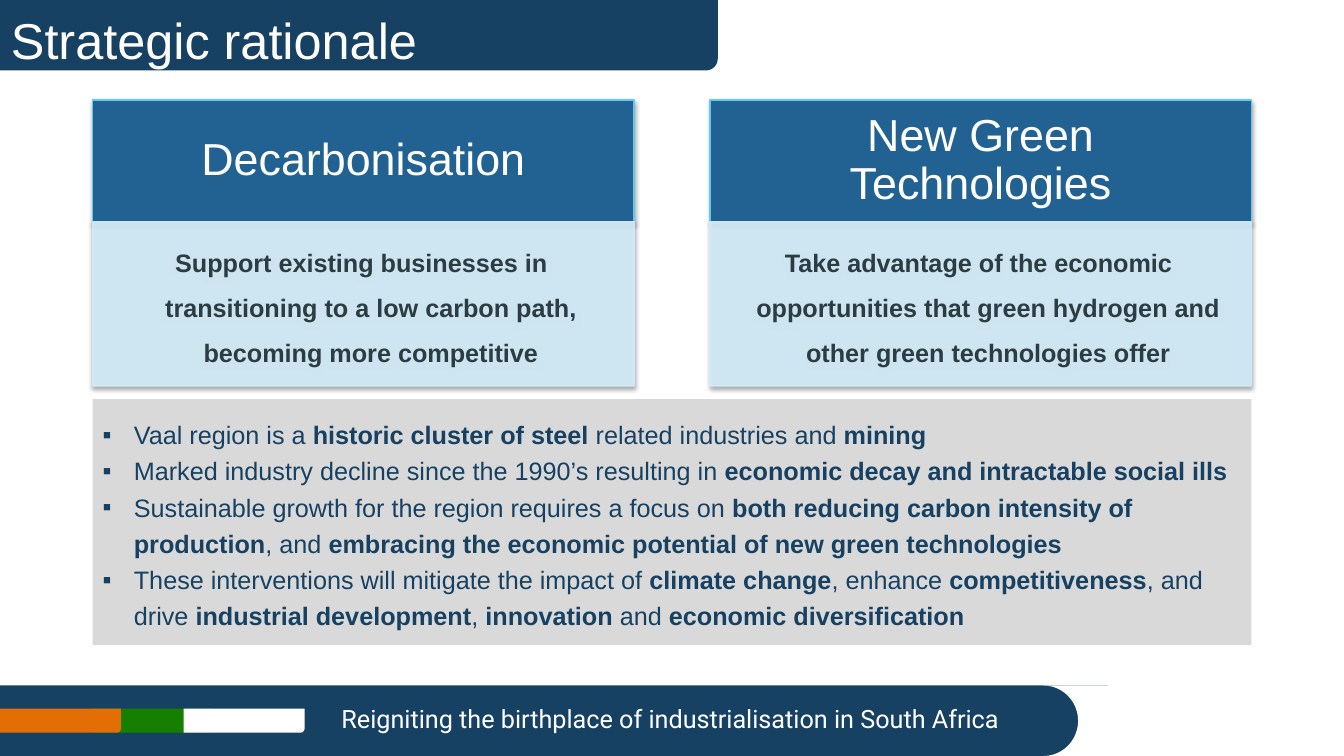
import pptx
import pptx.util
import pptx.dml.color
import pptx.enum.shapes
import pptx.enum.text
import pptx.oxml
import pptx.oxml.ns
import lxml.etree
from dataclasses import dataclass

Shapes = pptx.enum.shapes.MSO_SHAPE
Align = pptx.enum.text.PP_ALIGN
Anchor = pptx.enum.text.MSO_ANCHOR
Inches = pptx.util.Inches
Pt = pptx.util.Pt

SLIDE_WIDTH = Inches(13.33)
SLIDE_HEIGHT = Inches(7.5)


@dataclass(frozen=True)
class Theme:
    navy: str = "174162"
    blue: str = "226292"
    cyan: str = "5FCBEF"
    pale: str = "D2ECF9"
    slate: str = "2C3C43"
    grey: str = "D9D9D9"
    white: str = "FFFFFF"
    green: str = "158000"
    orange: str = "E26E05"
    font: str = "Arial"
    footer_font: str = "Roboto"
    title_size: int = 36
    heading_size: int = 32
    body_size: int = 18


THEME = Theme()

# Horizontal and vertical places are percentages of the slide's width and height.
MARGIN = 6.9
PANEL_WIDTH = 40.29
PANEL_PITCH = 45.92
CONTENT_WIDTH = PANEL_PITCH + PANEL_WIDTH
FOOTER_TOP = 90.67
BAND_HEIGHT = 9.33
STRIPE_PITCH = 6.83

PANELS = [
    ("Decarbonisation",
     "Support existing businesses in transitioning to a low carbon path, "
     "becoming more competitive"),
    ("New Green Technologies",
     "Take advantage of the economic opportunities that green hydrogen and "
     "other green technologies offer"),
]

# Each bullet alternates between regular and bold text, starting with regular.
BULLETS = [
    ["Vaal region is a ", "historic cluster of steel ",
     "related industries and ", "mining"],
    ["Marked industry decline since the 1990’s resulting in ",
     "economic decay and intractable social ills"],
    ["Sustainable growth for the region requires a focus on ",
     "both reducing carbon intensity of production", ", and ",
     "embracing the economic potential of new green technologies"],
    ["These interventions will mitigate the impact of ", "climate change",
     ", enhance ", "competitiveness", ", and drive ",
     "industrial development", ", ", "innovation", " and ",
     "economic diversification"],
]


def color(code):
    return pptx.dml.color.RGBColor.from_string(code)


def place(left, top, width, height):
    """Turn percentages of the slide into lengths."""
    return (int(SLIDE_WIDTH * left / 100), int(SLIDE_HEIGHT * top / 100),
            int(SLIDE_WIDTH * width / 100), int(SLIDE_HEIGHT * height / 100))


def add_block(slide, kind, area, fill, line=None):
    block = slide.shapes.add_shape(kind, *place(*area))
    block.shadow.inherit = False
    block.fill.solid()
    block.fill.fore_color.rgb = color(fill)
    if line:
        block.line.color.rgb = color(line)
        block.line.width = Pt(1)
    else:
        block.line.fill.background()
    return block


def add_tab(slide, area, fill):
    """Add a bar whose bottom right corner is rounded."""
    tab = add_block(slide, Shapes.ROUND_1_RECTANGLE, area, fill)
    tab._element.spPr.xfrm.set("flipV", "1")


def add_soft_shadow(block):
    effects = block._element.spPr.find(pptx.oxml.ns.qn("a:effectLst"))
    effects.append(pptx.oxml.parse_xml(
        f'<a:outerShdw {pptx.oxml.ns.nsdecls("a")} blurRad="{Pt(3)}" '
        f'dist="{Pt(2)}" dir="5400000" rotWithShape="0">'
        '<a:srgbClr val="000000"><a:alpha val="35000"/></a:srgbClr>'
        '</a:outerShdw>'))


def make_translucent(block, percent):
    """Apply one opacity to the fill and the line."""
    for code in block._element.spPr.iter(pptx.oxml.ns.qn("a:srgbClr")):
        alpha = lxml.etree.SubElement(code, pptx.oxml.ns.qn("a:alpha"))
        alpha.set("val", str(percent * 1000))


def set_frame(block, anchor, insets=(0.1, 0.05, 0.1, 0.05)):
    frame = block.text_frame
    frame.word_wrap = True
    frame.vertical_anchor = anchor
    (frame.margin_left, frame.margin_top,
     frame.margin_right, frame.margin_bottom) = map(Inches, insets)
    return frame


def set_indent(para, indent):
    """Give a paragraph a hanging indent."""
    properties = para._p.get_or_add_pPr()
    properties.set("marL", str(Inches(indent)))
    properties.set("indent", str(-Inches(indent)))
    return properties


def add_mark(properties):
    """Put a square bullet before a paragraph."""
    for tag, key, value in (("a:buFont", "typeface", THEME.font),
                            ("a:buChar", "char", "▪")):
        mark = lxml.etree.SubElement(properties, pptx.oxml.ns.qn(tag))
        mark.set(key, value)


def style(span, size, code, bold=False, font=THEME.font):
    span.font.name = font
    span.font.size = Pt(size)
    span.font.bold = bold
    span.font.color.rgb = color(code)


def write(frame, text, align, spacing, size, code, **look):
    para = frame.paragraphs[0]
    para.text = text
    para.alignment = align
    para.line_spacing = spacing
    style(para.runs[0], size, code, **look)
    return para


def add_label(slide, area, text, align, size, anchor, font):
    box = slide.shapes.add_textbox(*place(*area))
    write(set_frame(box, anchor), text, align, 1.0, size, THEME.white,
          font=font)


def add_panel(slide, column, heading, body):
    left = MARGIN + column * PANEL_PITCH
    head = add_block(slide, Shapes.RECTANGLE, (left, 13.2, PANEL_WIDTH, 16.13),
                     THEME.blue, THEME.cyan)
    add_soft_shadow(head)
    write(set_frame(head, Anchor.MIDDLE, (0.25, 0.14, 0.25, 0.14)), heading,
          Align.CENTER, 0.9, THEME.heading_size, THEME.white)

    card = add_block(slide, Shapes.RECTANGLE, (left, 29.33, PANEL_WIDTH, 21.73),
                     THEME.pale, THEME.pale)
    make_translucent(card, 90)
    add_soft_shadow(card)
    para = write(set_frame(card, Anchor.TOP, (0.1, 0.1, 0.14, 0.16)), body,
                 Align.CENTER, 1.5, THEME.body_size, THEME.slate, bold=True)
    set_indent(para, 0.19)


def add_bullets(slide, area, bullets):
    box = add_block(slide, Shapes.RECTANGLE, area, THEME.grey)
    frame = set_frame(box, Anchor.MIDDLE)
    for number, pieces in enumerate(bullets):
        para = frame.add_paragraph() if number else frame.paragraphs[0]
        para.alignment = Align.LEFT
        para.line_spacing = 1.2
        add_mark(set_indent(para, 0.31))
        for position, piece in enumerate(pieces):
            span = para.add_run()
            span.text = piece
            style(span, THEME.body_size, THEME.navy, bold=position % 2 == 1)


def add_footer(slide):
    add_block(slide, Shapes.RECTANGLE, (0, FOOTER_TOP, 82.45, BAND_HEIGHT),
              THEME.navy)
    add_label(slide, (21.23, 92.4, 53.86, 5.33),
              "Reigniting the birthplace of industrialisation in South Africa",
              Align.RIGHT, THEME.body_size, Anchor.MIDDLE, THEME.footer_font)
    for step, fill in ((1, THEME.green), (0, THEME.orange), (2, THEME.white)):
        add_tab(slide, (step * STRIPE_PITCH, 93.73, 9, 3.2), fill)
    cutout = add_block(slide, Shapes.FLOWCHART_STORED_DATA,
                       (77.64, FOOTER_TOP, 15.45, BAND_HEIGHT), THEME.white)
    cutout.rotation = 180


def main():
    deck = pptx.Presentation()
    deck.slide_width = SLIDE_WIDTH
    deck.slide_height = SLIDE_HEIGHT
    page = deck.slides.add_slide(deck.slide_layouts[6])
    add_tab(page, (0, 0, 53.41, BAND_HEIGHT), THEME.navy)
    add_footer(page)
    add_label(page, (0.08, 0.53, 53.11, 8.13), "Strategic rationale",
              Align.LEFT, THEME.title_size, Anchor.TOP, THEME.font)
    for column, (heading, body) in enumerate(PANELS):
        add_panel(page, column, heading, body)
    add_bullets(page, (MARGIN, 52.8, CONTENT_WIDTH, 32.53), BULLETS)
    deck.save("out.pptx")


if __name__ == "__main__":
    main()
